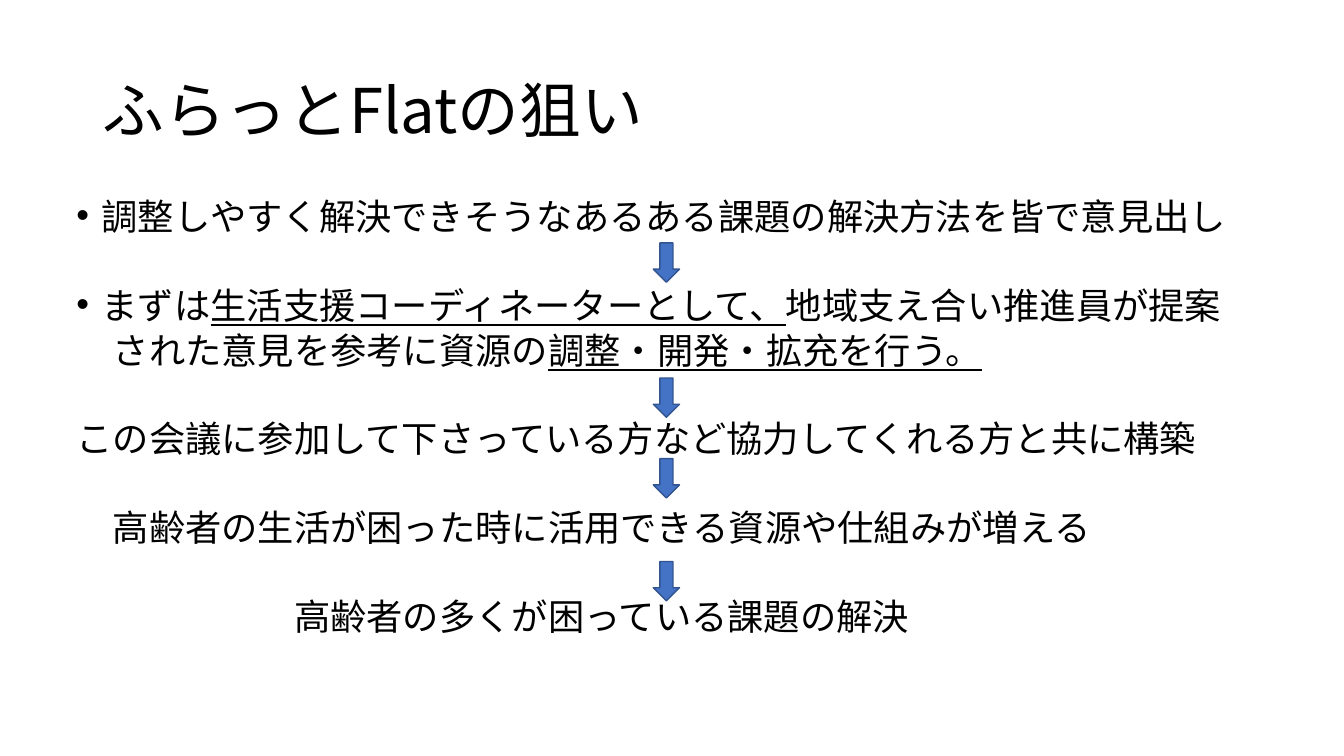
from pptx import Presentation
from pptx.dml.color import RGBColor
from pptx.enum import shapes, text
from pptx.oxml import ns
from pptx.util import Inches, Pt
from lxml import etree

# Content
FONT = "Noto Sans CJK JP"
BLACK = RGBColor(0x00, 0x00, 0x00)
BLUE = RGBColor(0x44, 0x72, 0xC4)
DARK_BLUE = RGBColor(0x32, 0x54, 0x91)

TITLE = "ふらっとFlatの狙い"
# (bulleted, indent in characters, space before in points, [(text, underlined)])
TIGHT, WIDE = 10, 41.6
STEPS = [
    (True, 0, 0, [("調整しやすく解決できそうなあるある課題の解決方法を皆で意見出し", False)]),
    (True, 0, WIDE, [("まずは", False),
                     ("生活支援コーディネーターとして、", True),
                     ("地域支え合い推進員が提案", False)]),
    (False, 1, TIGHT, [("された意見を参考に資源の", False),
                       ("調整・開発・拡充を行う。", True)]),
    (False, 0, WIDE, [("この会議に参加して下さっている方など協力してくれる方と共に構築", False)]),
    (False, 1, WIDE, [("高齢者の生活が困った時に活用できる資源や仕組みが増える", False)]),
    (False, 6, WIDE, [("高齢者の多くが困っている課題の解決", False)]),
]
ARROW_TOPS = [2.41, 3.75, 4.55, 5.57]
BODY_SIZE = 25.9
BULLET_INDENT = 0.25


def add_run(p, words, size, underlined=False):
    r = p.add_run()
    r.text = words
    r.font.size = Pt(size)
    r.font.name = FONT
    r.font.color.rgb = BLACK
    r.font.underline = underlined
    etree.SubElement(r.font._element, ns.qn("a:ea"), typeface=FONT)


def add_box(s, left, top, width, height, anchor):
    tf = s.shapes.add_textbox(Inches(left), Inches(top), Inches(width), Inches(height)).text_frame
    tf.word_wrap = True
    tf.vertical_anchor = anchor
    return tf


def indent(p, bulleted, chars):
    pPr = p._p.get_or_add_pPr()
    left = Inches(BULLET_INDENT) if bulleted else Pt(chars * BODY_SIZE)
    pPr.set("marL", str(int(left)))
    if bulleted:
        pPr.set("indent", str(-int(left)))
        etree.SubElement(pPr, ns.qn("a:buFont"), typeface="Arial")
        etree.SubElement(pPr, ns.qn("a:buChar"), char="•")


prs = Presentation()
prs.slide_width, prs.slide_height = Inches(13.33), Inches(7.5)
s = prs.slides.add_slide(prs.slide_layouts[6])

# Title
p = add_box(s, 0.92, 0.4, 11.5, 1.45, text.MSO_ANCHOR.MIDDLE).paragraphs[0]
p.line_spacing = 0.9
add_run(p, TITLE, 44)

# Steps
tf = add_box(s, 0.66, 2, 12.59, 4.76, text.MSO_ANCHOR.TOP)
for i, (bulleted, chars, before, runs) in enumerate(STEPS):
    p = tf.add_paragraph() if i else tf.paragraphs[0]
    p.line_spacing = 0.7
    p.space_before = Pt(before)
    indent(p, bulleted, chars)
    for words, underlined in runs:
        add_run(p, words, BODY_SIZE, underlined)

# Arrows between steps
for top in ARROW_TOPS:
    sp = s.shapes.add_shape(shapes.MSO_SHAPE.DOWN_ARROW, Inches(6.48), Inches(top),
                            Inches(0.26), Inches(0.39))
    sp.shadow.inherit = False
    sp.fill.solid()
    sp.fill.fore_color.rgb = BLUE
    sp.line.color.rgb = DARK_BLUE
    sp.line.width = Pt(1)

prs.save("out.pptx")
